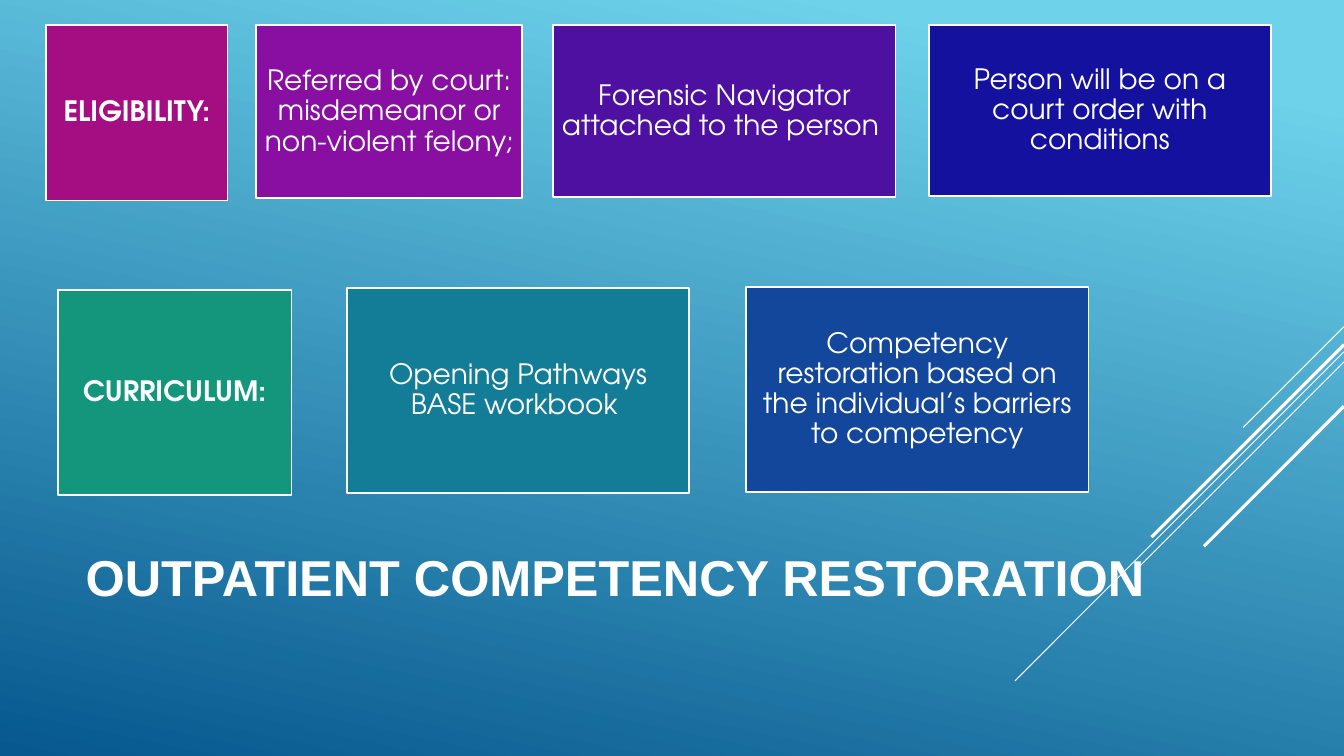
from lxml import etree
from pptx import Presentation
from pptx.dml.color import RGBColor
from pptx.enum.shapes import MSO_CONNECTOR, MSO_SHAPE
from pptx.enum.text import MSO_ANCHOR, MSO_AUTO_SIZE, PP_ALIGN
from pptx.oxml.ns import qn
from pptx.util import Pt

STRAIGHT = MSO_CONNECTOR.STRAIGHT
RECTANGLE = MSO_SHAPE.RECTANGLE
MIDDLE, TOP = MSO_ANCHOR.MIDDLE, MSO_ANCHOR.TOP
CENTER, LEFT = PP_ALIGN.CENTER, PP_ALIGN.LEFT
NO_AUTOFIT = MSO_AUTO_SIZE.NONE
TITLE_ONLY = 5

SLIDE_WIDTH, SLIDE_HEIGHT = 960, 540
WHITE = "FFFFFF"
TITLE_FONT, CARD_FONT = "Arial", "TeX Gyre Adventor"

# Each card: text, fill, left, top, width, height; the first is the row heading
ELIGIBILITY = [
    ("ELIGIBILITY:", "A50E82", 33, 18, 129.6, 125.3),
    ("Referred by court: misdemeanor or non-violent felony;", "890FA2", 183, 18, 190, 123.5),
    ("Forensic Navigator attached to the person ", "4D10A0", 395.2, 18, 244.5, 123),
    ("Person will be on a court order with conditions", "13119D", 663.4, 18, 244.5, 122),
]
CURRICULUM = [
    ("CURRICULUM:", "14967C", 41.3, 207.2, 167, 146.6),
    ("Opening Pathways BASE workbook ", "137D98", 247.9, 205.6, 244.5, 146.6),
    ("Competency restoration based on the individual’s barriers to competency",
     "12479B", 533, 204.8, 244.5, 146.6),
]
# Each diagonal: top at the right edge, horizontal run, line width
DIAGONALS = [
    (233.3, 72, 0.75),
    (251.3, 235, 0.75),
    (258.5, 149.3, 0.75),
    (246.2, 137.5, 2.25),
    (290.2, 100, 2.25),
]


def color(hex_string):
    return RGBColor.from_string(hex_string)


def format_paragraph(paragraph, alignment, font_name, size, bold):
    paragraph.alignment = alignment
    paragraph.line_spacing = 0.9
    for run in paragraph.runs:
        run.font.name = font_name
        run.font.size = Pt(size)
        run.font.bold = bold
        run.font.color.rgb = color(WHITE)


def set_background(slide):
    fill = slide.background.fill
    fill.gradient()
    fill.gradient_angle = 258
    stops = ((0.1, "6ED2EB"), (1, "06588E"))
    for stop, (position, hex_string) in zip(fill.gradient_stops, stops):
        stop.position = position
        stop.color.rgb = color(hex_string)


def add_diagonals(slide, right):
    for top, run, width in DIAGONALS:
        line = slide.shapes.add_connector(
            STRAIGHT, Pt(right), Pt(top), Pt(right - run), Pt(top + run))
        line.line.color.rgb = color(WHITE)
        line.line.width = Pt(width)
        etree.SubElement(line._element.spPr, qn("a:effectLst"))


def place_title(slide, text, left, top, width, height):
    title = slide.shapes.title
    title.left, title.top = Pt(left), Pt(top)
    title.width, title.height = Pt(width), Pt(height)
    text_frame = title.text_frame
    text_frame.text = text
    text_frame.word_wrap = True
    text_frame.auto_size = NO_AUTOFIT
    text_frame.vertical_anchor = TOP
    text_frame.margin_top = Pt(17)
    format_paragraph(text_frame.paragraphs[0], LEFT, TITLE_FONT, 36, True)


def add_card(slide, text, fill, left, top, width, height, bold):
    card = slide.shapes.add_shape(RECTANGLE, Pt(left), Pt(top), Pt(width), Pt(height))
    card.shadow.inherit = False
    card.fill.solid()
    card.fill.fore_color.rgb = color(fill)
    card.line.color.rgb = color(WHITE)
    card.line.width = Pt(1.25)
    text_frame = card.text_frame
    text_frame.text = text
    text_frame.word_wrap = True
    text_frame.vertical_anchor = MIDDLE
    text_frame.margin_left = text_frame.margin_right = Pt(6)
    text_frame.margin_top = text_frame.margin_bottom = Pt(6)
    format_paragraph(text_frame.paragraphs[0], CENTER, CARD_FONT, 20, bold)


def add_card_row(slide, cards):
    for index, card in enumerate(cards):
        add_card(slide, *card, bold=index == 0)


def main():
    presentation = Presentation()
    presentation.slide_width = Pt(SLIDE_WIDTH)
    presentation.slide_height = Pt(SLIDE_HEIGHT)
    slide = presentation.slides.add_slide(presentation.slide_layouts[TITLE_ONLY])

    # Backdrop
    set_background(slide)
    add_diagonals(slide, SLIDE_WIDTH)

    # Title and the two rows of cards
    place_title(slide, "OUTPATIENT COMPETENCY RESTORATION", 54, 378, 789, 130)
    add_card_row(slide, ELIGIBILITY)
    add_card_row(slide, CURRICULUM)

    presentation.save("out.pptx")


if __name__ == "__main__":
    main()
